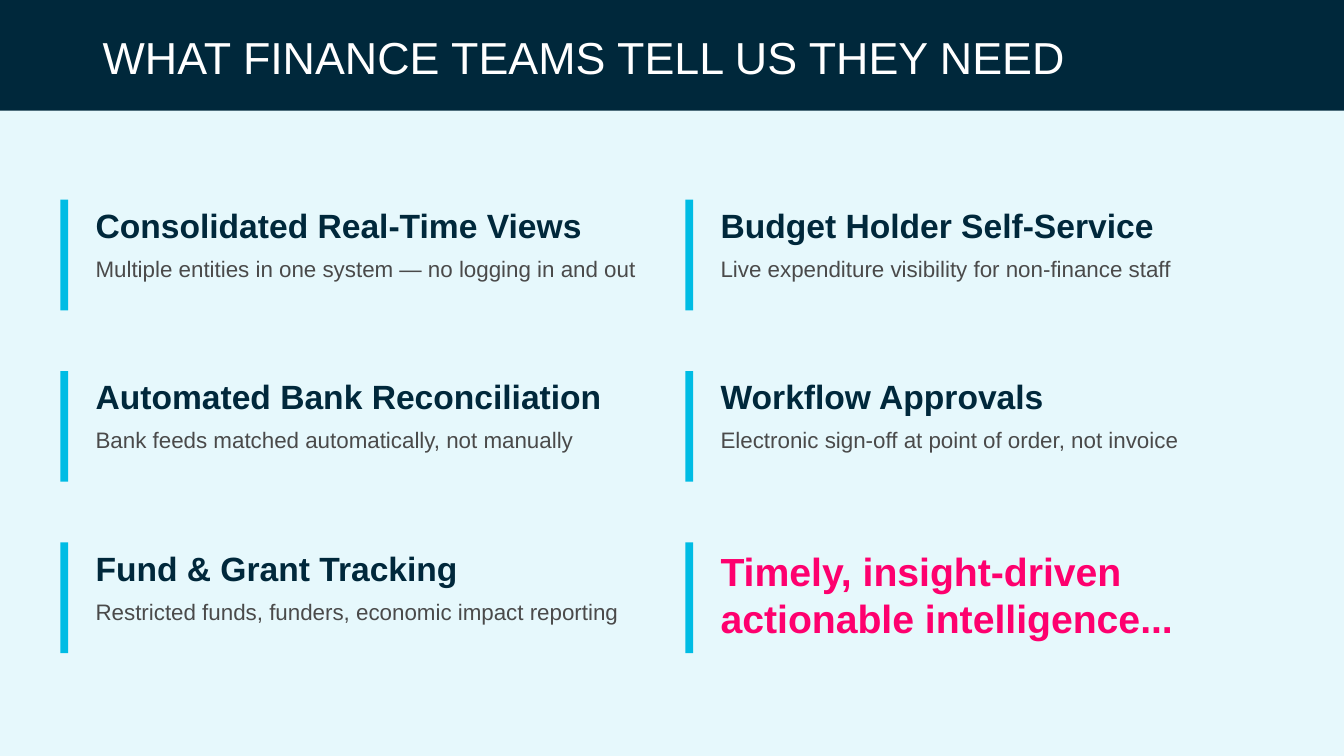
"""Build the slide on what finance teams need."""
from dataclasses import dataclass

from pptx import Presentation
from pptx.dml.color import RGBColor as RGB
from pptx.enum.shapes import MSO_SHAPE as SHAPE
from pptx.enum.text import MSO_ANCHOR as ANCHOR
from pptx.util import Cm, Pt

TITLE = "WHAT FINANCE TEAMS TELL US THEY NEED"
NEEDS = [
    ("Consolidated Real-Time Views", "Multiple entities in one system — no logging in and out"),
    ("Budget Holder Self-Service", "Live expenditure visibility for non-finance staff"),
    ("Automated Bank Reconciliation", "Bank feeds matched automatically, not manually"),
    ("Workflow Approvals", "Electronic sign-off at point of order, not invoice"),
    ("Fund & Grant Tracking", "Restricted funds, funders, economic impact reporting"),
]
CLOSING = "Timely, insight-driven actionable intelligence..."


@dataclass(frozen=True)
class Theme:
    """Colours, font and type sizes."""
    font: str = "Arial"
    page: str = "E6F8FC"
    navy: str = "00283B"
    cyan: str = "00BCE4"
    grey: str = "4A4A4A"
    pink: str = "FE006E"
    white: str = "FFFFFF"
    title: int = 32
    closing: int = 28
    heading: int = 24
    detail: int = 16


T = Theme()
SLIDE_W, SLIDE_H = 33.87, 19.05
HEADER_H = 2.79
COLS = 2
LEFT, TOP = 1.52, 5.03
COL_STEP, ROW_STEP = 15.75, 4.32
BAR_W, BAR_H = 0.2, 2.79
TEXT_DX, TEXT_W = 0.64, 14.4
CLOSING_W = 13.16
HEADING_H, DETAIL_H = 1.27, 1.52


def add_rect(s, x, y, w, h, color):
    """Draw a plain filled rectangle."""
    sp = s.shapes.add_shape(SHAPE.RECTANGLE, Cm(x), Cm(y), Cm(w), Cm(h))
    sp.shadow.inherit = False
    sp.fill.solid()
    sp.fill.fore_color.rgb = RGB.from_string(color)
    sp.line.fill.background()


def add_text(s, text, x, y, w, h, *, size, color, bold=False, anchor=ANCHOR.TOP, spacing=1.0):
    """Place a wrapped text box with one formatted paragraph."""
    tf = s.shapes.add_textbox(Cm(x), Cm(y), Cm(w), Cm(h)).text_frame
    tf.word_wrap = True
    tf.vertical_anchor = anchor
    p = tf.paragraphs[0]
    p.line_spacing = spacing
    r = p.add_run()
    r.text = text
    r.font.name, r.font.size, r.font.bold = T.font, Pt(size), bold
    r.font.color.rgb = RGB.from_string(color)


def cell(i):
    """Return the left and top of grid cell i."""
    row, col = divmod(i, COLS)
    return LEFT + col * COL_STEP, TOP + row * ROW_STEP


def main():
    """Assemble and save the slide."""
    prs = Presentation()
    prs.slide_width, prs.slide_height = Cm(SLIDE_W), Cm(SLIDE_H)
    s = prs.slides.add_slide(prs.slide_layouts[6])
    s.background.fill.solid()
    s.background.fill.fore_color.rgb = RGB.from_string(T.page)

    add_rect(s, 0, 0, SLIDE_W, HEADER_H, T.navy)
    add_text(s, TITLE, 2.34, 0.46, 29.21, 2.11, size=T.title, color=T.white,
             anchor=ANCHOR.MIDDLE, spacing=0.9)

    for i, (heading, detail) in enumerate(NEEDS):
        x, y = cell(i)
        add_rect(s, x, y, BAR_W, BAR_H, T.cyan)
        add_text(s, heading, x + TEXT_DX, y, TEXT_W, HEADING_H,
                 size=T.heading, color=T.navy, bold=True)
        add_text(s, detail, x + TEXT_DX, y + HEADING_H, TEXT_W, DETAIL_H,
                 size=T.detail, color=T.grey)

    x, y = cell(len(NEEDS))
    add_rect(s, x, y, BAR_W, BAR_H, T.cyan)
    add_text(s, CLOSING, x + TEXT_DX, y, CLOSING_W, HEADING_H,
             size=T.closing, color=T.pink, bold=True)
    prs.save("out.pptx")


if __name__ == "__main__":
    main()
